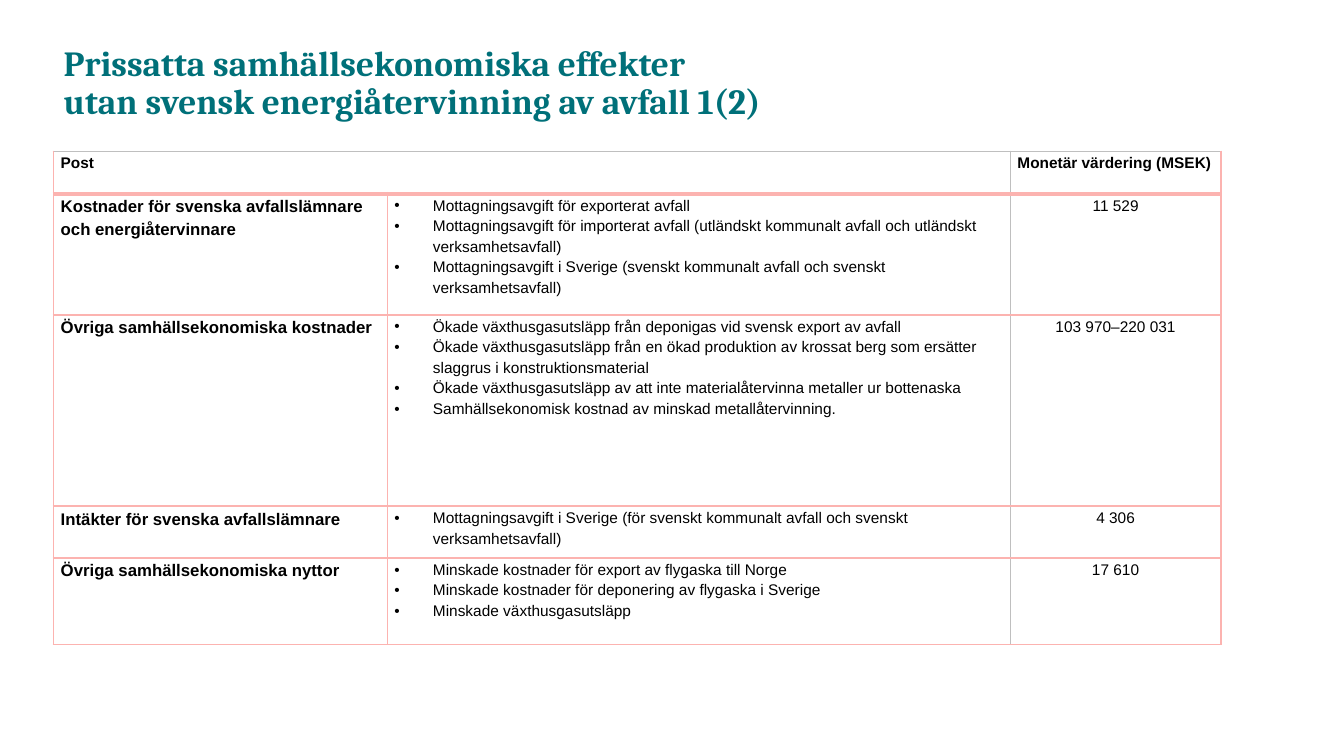
import pptx
import pptx.util
import pptx.dml.color
import pptx.enum.text
import pptx.oxml.ns
import lxml.etree

Cm, Pt = pptx.util.Cm, pptx.util.Pt
RGBColor = pptx.dml.color.RGBColor
PP_ALIGN = pptx.enum.text.PP_ALIGN
MSO_ANCHOR = pptx.enum.text.MSO_ANCHOR
qn = pptx.oxml.ns.qn

# Content
TITLE = "Prissatta samhällsekonomiska effekter\vutan svensk energiåtervinning av avfall 1(2)"
HEADER = ("Post", "Monetär värdering (MSEK)")
ROWS = [
    ("Kostnader för svenska avfallslämnare och energiåtervinnare",
     ["Mottagningsavgift för exporterat avfall",
      "Mottagningsavgift för importerat avfall (utländskt kommunalt avfall och utländskt verksamhetsavfall)",
      "Mottagningsavgift i Sverige (svenskt kommunalt avfall och svenskt verksamhetsavfall)"],
     "11 529"),
    ("Övriga samhällsekonomiska kostnader",
     ["Ökade växthusgasutsläpp från deponigas vid svensk export av avfall",
      "Ökade växthusgasutsläpp från en ökad produktion av krossat berg som ersätter "
      "slaggrus i konstruktionsmaterial",
      "Ökade växthusgasutsläpp av att inte materialåtervinna metaller ur bottenaska",
      "Samhällsekonomisk kostnad av minskad metallåtervinning."],
     "103 970–220 031"),
    ("Intäkter för svenska avfallslämnare",
     ["Mottagningsavgift i Sverige (för svenskt kommunalt avfall och svenskt verksamhetsavfall)"],
     "4 306"),
    ("Övriga samhällsekonomiska nyttor",
     ["Minskade kostnader för export av flygaska till Norge",
      "Minskade kostnader för deponering av flygaska i Sverige",
      "Minskade växthusgasutsläpp"],
     "17 610"),
]

# Layout and colours
LEFT, TABLE_TOP = 1.35, 3.81
COL_WIDTHS = (8.41, 15.7, 5.31)
ROW_HEIGHTS = (1.07, 3.05, 4.83, 1.3, 2.18)
TEAL = RGBColor(0x00, 0x70, 0x79)
PINK = RGBColor(0xFC, 0xB3, 0xB0)
GREY = RGBColor(0xBF, 0xBF, 0xBF)
BLACK = RGBColor(0, 0, 0)
WHITE = RGBColor(0xFF, 0xFF, 0xFF)


def write(tf, lines, size=11, bold=False, color=BLACK, font="Arial",
          align=PP_ALIGN.LEFT, spacing=1.2, after=6, bullet=False):
    """Fill a text frame, one paragraph per line; space follows the last one."""
    for i, line in enumerate(lines):
        p = tf.paragraphs[0] if i == 0 else tf.add_paragraph()
        p.text = line
        if bullet:
            pPr = p._p.get_or_add_pPr()
            pPr.set("marL", str(Cm(0.97)))
            pPr.set("indent", str(-Cm(0.97)))
            lxml.etree.SubElement(pPr, qn("a:buFont")).set("typeface", "Arial")
            lxml.etree.SubElement(pPr, qn("a:buChar")).set("char", "•")
        p.alignment = align
        p.line_spacing = spacing
        p.space_before = Pt(0)
        p.space_after = Pt(after if i == len(lines) - 1 else 0)
        for r in p.runs:
            r.font.name, r.font.size, r.font.bold = font, Pt(size), bold
            r.font.color.rgb = color


def set_borders(cell, **sides):
    """Draw the cell borders; each side is a (colour, points) pair."""
    tcPr = cell._tc.get_or_add_tcPr()
    for side in "LRTB":
        color, width = sides[side]
        ln = lxml.etree.SubElement(tcPr, qn("a:ln" + side), w=str(Pt(width)))
        fill = lxml.etree.SubElement(ln, qn("a:solidFill"))
        lxml.etree.SubElement(fill, qn("a:srgbClr"), val=str(color))


prs = pptx.Presentation()
prs.slide_width, prs.slide_height = Cm(33.87), Cm(19.05)
s = prs.slides.add_slide(prs.slide_layouts[5])

# Title
sp = s.shapes.title
sp.left, sp.top, sp.width, sp.height = Cm(LEFT), Cm(1.22), Cm(22.38), Cm(1.78)
tf = sp.text_frame
tf.word_wrap = True
tf.auto_size = pptx.enum.text.MSO_AUTO_SIZE.NONE
tf.vertical_anchor = MSO_ANCHOR.MIDDLE
write(tf, [TITLE], size=25.2, bold=True, color=TEAL, font="Cambria", spacing=0.9, after=0)

# Table grid
n_rows, n_cols = len(ROW_HEIGHTS), len(COL_WIDTHS)
table = s.shapes.add_table(n_rows, n_cols, Cm(LEFT), Cm(TABLE_TOP),
                           Cm(sum(COL_WIDTHS)), Cm(sum(ROW_HEIGHTS))).table
table.horz_banding = False
for column, width in zip(table.columns, COL_WIDTHS):
    column.width = Cm(width)
for row, height in zip(table.rows, ROW_HEIGHTS):
    row.height = Cm(height)

# Cell borders, fills and margins
rules = [(GREY, 1), (PINK, 3)] + [(PINK, 1.5)] * (n_rows - 1)
dividers = [(PINK, 1.5), (PINK, 1), (GREY, 1), (PINK, 1.5)]
for i in range(n_rows):
    for j in range(n_cols):
        cell = table.cell(i, j)
        set_borders(cell, L=dividers[j], R=dividers[j + 1], T=rules[i], B=rules[i + 1])
        cell.fill.solid()
        cell.fill.fore_color.rgb = WHITE
        cell.margin_left = cell.margin_right = Cm(0.18)
        cell.margin_top = cell.margin_bottom = 0
        cell.vertical_anchor = MSO_ANCHOR.TOP

# Table text
table.cell(0, 0).merge(table.cell(0, 1))
for j, heading in zip((0, 2), HEADER):
    write(table.cell(0, j).text_frame, [heading], bold=True)
for i, (post, effects, value) in enumerate(ROWS, start=1):
    write(table.cell(i, 0).text_frame, [post], size=12, bold=True)
    write(table.cell(i, 1).text_frame, effects, bullet=True)
    write(table.cell(i, 2).text_frame, [value], align=PP_ALIGN.CENTER)

prs.save("out.pptx")
